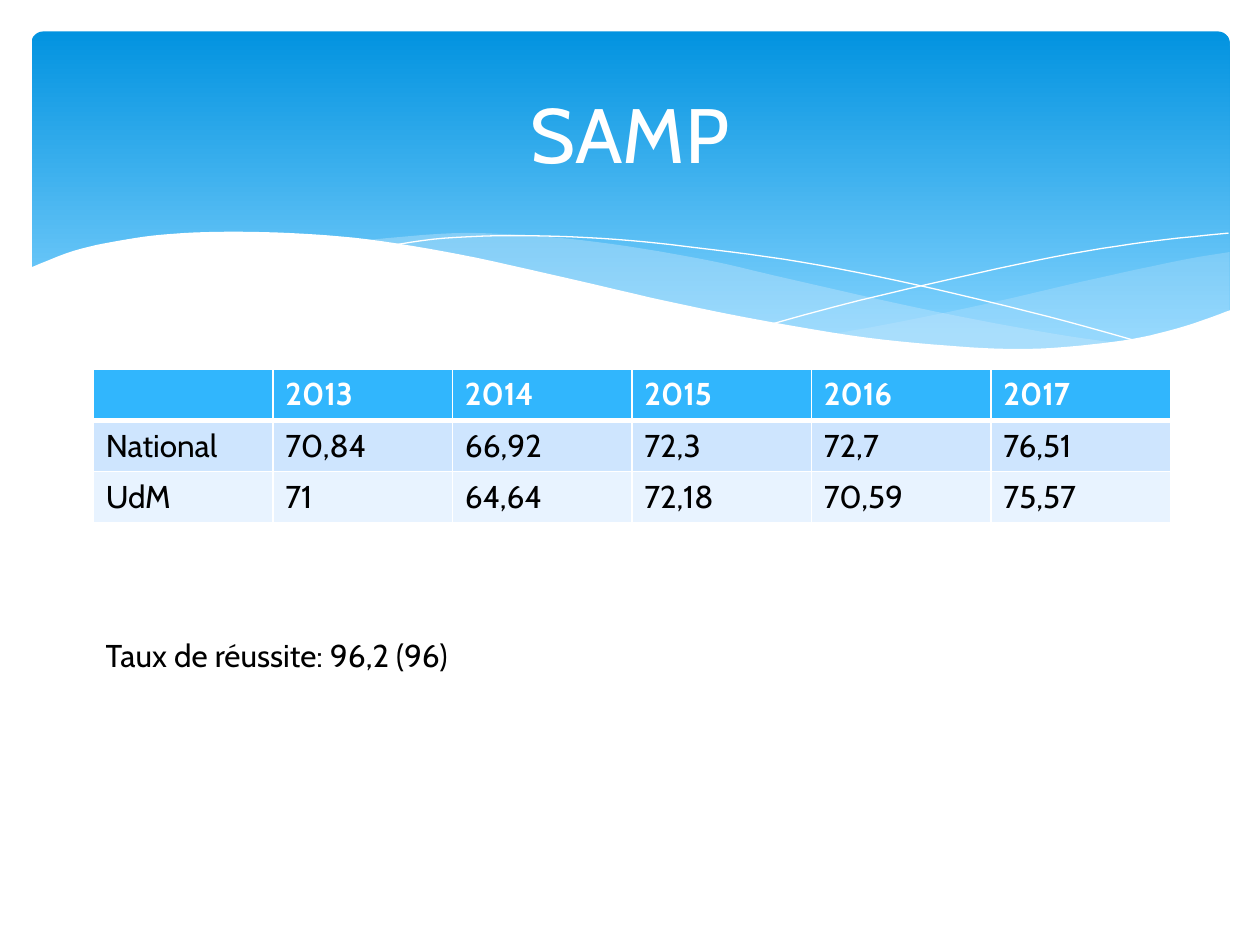
"""Build the SAMP slide: a wave banner, a results table and a success rate."""
from lxml.etree import SubElement
from pptx import Presentation
from pptx.dml.color import RGBColor
from pptx.enum.shapes import MSO_SHAPE as Shape
from pptx.enum.text import MSO_ANCHOR as Anchor, PP_ALIGN as Align
from pptx.oxml import parse_xml
from pptx.oxml.ns import nsdecls, qn
from pptx.util import Inches, Pt

TITLE = "SAMP"
RATE = "Taux de réussite: 96,2 (96)"
ROWS = [
    ["", "2013", "2014", "2015", "2016", "2017"],
    ["National", "70,84", "66,92", "72,3", "72,7", "76,51"],
    ["UdM", "71", "64,64", "72,18", "70,59", "75,57"],
]
FONT = "Cabin"
COLORS = {
    "white": "FFFFFF", "black": "000000", "wave": "C6E7FC",
    "banner_top": "0293E0", "banner_bottom": "83D3FE",
    "header": "31B6FD", "odd": "CEE5FE", "even": "E8F3FF",
}
ROW_FILLS = ["header", "odd", "even"]

RIGHT_WAVE = [
    [(9.76, 2), (9.35, 2.07), (8.61, 2.23), (7.79, 2.42), (7.06, 2.57), (6.61, 2.65)],
    [(6.61, 2.65), (7.05, 2.71), (7.57, 2.76), (8.14, 2.78), (8.72, 2.74),
     (9.21, 2.65), (9.49, 2.57), (9.76, 2.47)],
]
MIDDLE_WAVE = [
    [(8.93, 2.73), (8.37, 2.65), (7.41, 2.47), (6.29, 2.22), (5.69, 2.08),
     (5.14, 1.98), (4.65, 1.91), (4.2, 1.87), (3.61, 1.85), (2.86, 1.91)],
    [(2.86, 1.91), (3.42, 1.99), (4.04, 2.11), (4.91, 2.32), (5.66, 2.48),
     (6.34, 2.61), (6.95, 2.7), (7.48, 2.76), (7.96, 2.78), (8.38, 2.78), (8.93, 2.73)],
]
FALLING_LINE = [
    [(3.09, 1.95), (3.53, 1.89), (4.16, 1.87), (4.89, 1.9), (5.56, 1.97),
     (6.36, 2.08), (7.27, 2.26), (8.31, 2.51), (9.07, 2.72)],
]
RISING_LINE = [
    [(6.13, 2.57), (6.72, 2.41), (7.48, 2.23), (8.36, 2.04), (9.1, 1.92), (9.75, 1.85)],
]
WHITE_WAVE = [
    [(9.77, 2.46), (9.4, 2.59), (8.99, 2.69), (8.5, 2.75), (8.09, 2.77), (7.61, 2.75),
     (6.88, 2.68), (6.03, 2.54), (5.29, 2.39), (4.47, 2.2), (3.65, 2.02), (2.92, 1.9),
     (2.3, 1.85), (1.77, 1.84), (1.32, 1.86), (0.95, 1.91), (0.59, 1.99), (0.23, 2.13)],
    [(0.23, 3.29), (9.77, 3.29)],
]
WAVES = [
    (RIGHT_WAVE, "wave", 29),
    (MIDDLE_WAVE, "wave", 40),
    (FALLING_LINE, None, 100),
    (RISING_LINE, None, 100),
    (WHITE_WAVE, "white", 100),
]


def rgb(name):
    return RGBColor.from_string(COLORS[name])


def smooth_curve(points, steps=6):
    if len(points) < 3:
        return points
    padded = [points[0], *points, points[-1]]
    curve = [points[0]]
    for before, start, end, after in zip(padded, padded[1:], padded[2:], padded[3:]):
        for step in range(1, steps + 1):
            t = step / steps
            curve.append(tuple(
                (2 * b + (c - a) * t + (2 * a - 5 * b + 4 * c - d) * t ** 2
                 + (3 * b - a - 3 * c + d) * t ** 3) / 2
                for a, b, c, d in zip(before, start, end, after)
            ))
    return curve


def add_wave(slide, curves, color, opacity):
    points = [(x * 1000, y * 1000) for curve in curves for x, y in smooth_curve(curve)]
    builder = slide.shapes.build_freeform(*points[0], scale=Inches(1) / 1000)
    builder.add_line_segments(points[1:], close=color is not None)
    shape = builder.convert_to_shape()
    shape.shadow.inherit = False
    if color is None:
        shape.fill.background()
        shape.line.color.rgb = rgb("white")
        shape.line.width = Pt(0)
        return
    shape.fill.solid()
    shape.fill.fore_color.rgb = rgb(color)
    shape.line.fill.background()
    if opacity < 100:
        fill_color = shape.element.spPr.find(qn("a:solidFill"))[0]
        SubElement(fill_color, qn("a:alpha")).set("val", str(opacity * 1000))


def add_banner(slide):
    banner = slide.shapes.add_shape(
        Shape.ROUNDED_RECTANGLE, Inches(0.25), Inches(0.25), Inches(9.51), Inches(2.7))
    banner.adjustments[0] = 0.034
    banner.shadow.inherit = False
    banner.line.fill.background()
    banner.fill.gradient()
    banner.fill.gradient_angle = 270
    stops = zip(banner.fill.gradient_stops, [0, 0.9], ["banner_top", "banner_bottom"])
    for stop, position, color in stops:
        stop.position = position
        stop.color.rgb = rgb(color)


def add_run(paragraph, text, size, color, bold=False):
    run = paragraph.add_run()
    run.text = text
    run.font.name = FONT
    run.font.size = Pt(size)
    run.font.bold = bold
    run.font.color.rgb = rgb(color)


def set_borders(cell, widths):
    properties = cell._tc.get_or_add_tcPr()
    for index, (side, width) in enumerate(widths.items()):
        properties.insert(index, parse_xml(
            f'<a:ln{side} {nsdecls("a")} w="{Pt(width)}"><a:solidFill>'
            f'<a:srgbClr val="{COLORS["white"]}"/></a:solidFill></a:ln{side}>'))


def add_results(slide):
    table = slide.shapes.add_table(
        len(ROWS), len(ROWS[0]), Inches(0.74), Inches(2.93),
        Inches(8.55), Inches(1.22)).table
    for row_index, row in enumerate(ROWS):
        header = row_index == 0
        for column_index, text in enumerate(row):
            cell = table.cell(row_index, column_index)
            cell.fill.solid()
            cell.fill.fore_color.rgb = rgb(ROW_FILLS[row_index])
            set_borders(cell, {"L": 1, "R": 1, "T": 3 if row_index == 1 else 1,
                               "B": 3 if header else 1})
            if text:
                add_run(cell.text_frame.paragraphs[0], text, 18,
                        "white" if header else "black", header)


def add_title(slide):
    title = slide.shapes.title
    title.left, title.top = Inches(0.5), Inches(0.37)
    title.width, title.height = Inches(9), Inches(1.37)
    title.text_frame.vertical_anchor = Anchor.MIDDLE
    paragraph = title.text_frame.paragraphs[0]
    paragraph.alignment = Align.CENTER
    add_run(paragraph, TITLE, 44, "white")
    title.element.getparent().append(title.element)


def add_rate(slide):
    box = slide.shapes.add_textbox(Inches(0.74), Inches(5), Inches(3.03), Inches(0.4))
    box.text_frame.word_wrap = False
    add_run(box.text_frame.paragraphs[0], RATE, 18, "black")


def main():
    presentation = Presentation()
    presentation.slide_width, presentation.slide_height = Inches(10), Inches(7.5)
    slide = presentation.slides.add_slide(presentation.slide_layouts[5])
    add_banner(slide)
    for curves, color, opacity in WAVES:
        add_wave(slide, curves, color, opacity)
    add_title(slide)
    add_results(slide)
    add_rate(slide)
    presentation.save("out.pptx")


if __name__ == "__main__":
    main()
